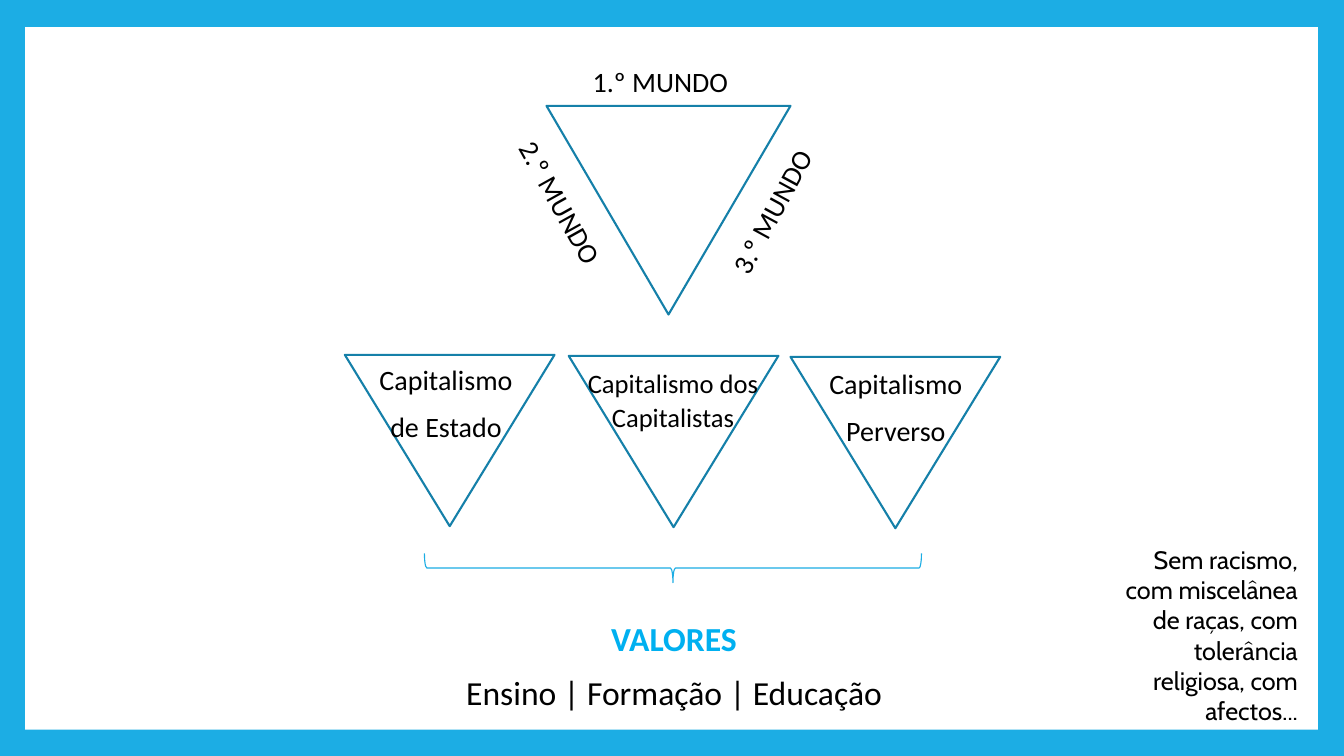
"""Build the slide on three worlds, three capitalisms and their values."""
import dataclasses
import typing

import pptx
import pptx.dml.color
import pptx.enum.shapes
import pptx.enum.text
import pptx.util

Inches = pptx.util.Inches
Pt = pptx.util.Pt
Kind = pptx.enum.shapes.MSO_SHAPE
Align = pptx.enum.text.PP_ALIGN
Box = tuple[float, float, float, float]


@dataclasses.dataclass(frozen=True)
class Theme:
    """Colours, fonts and type sizes of the slide."""
    frame: str = "1CADE4"
    paper: str = "FFFFFF"
    edge: str = "1580A9"
    ink: str = "000000"
    accent: str = "00B0F0"
    font: str = "Calibri"
    aside: str = "Cabin"
    small: float = 18
    snug: float = 19
    body: float = 20
    large: float = 24
    thick: float = 1.5
    thin: float = 0.79


THEME = Theme()


@dataclasses.dataclass(frozen=True)
class Form:
    """A preset shape with its fill, line and turn."""
    kind: Kind
    box: Box
    fill: str | None = None
    line: str | None = None
    width: float = THEME.thick
    turn: float = 0


@dataclasses.dataclass(frozen=True)
class Run:
    """A stretch of text in one style."""
    text: str
    size: float = THEME.body
    color: str = THEME.ink
    bold: bool = False
    font: str = THEME.font


@dataclasses.dataclass(frozen=True)
class Label:
    """A text box with one run per paragraph."""
    box: Box
    runs: tuple[Run, ...]
    align: Align = Align.CENTER
    turn: float = 0
    lead: float = 1.07
    after: float = 8


def triangle(left: float, top: float, wide: float, high: float,
             fill: str | None = None) -> Form:
    """Describe a triangle that stands on its tip."""
    return Form(Kind.ISOSCELES_TRIANGLE, (left, top, wide, high),
                fill, THEME.edge, turn=180)


def world(text: str, box: Box, turn: float = 0) -> Label:
    """Describe a label along one side of the top triangle."""
    return Label(box, (Run(text),), Align.LEFT, turn)


FORMS = (
    Form(Kind.RECTANGLE, (0.25, 0.27, 12.82, 6.97), THEME.paper),
    triangle(5.42, 1.05, 2.42, 2.07),
    *(triangle(left, top, 2.08, 1.7, THEME.paper)
      for left, top in ((3.42, 3.52), (5.64, 3.53), (7.84, 3.54))),
    Form(Kind.LEFT_BRACE, (6.53, 3.17, 0.29, 4.93), None,
         THEME.frame, THEME.thin, 270),
)

LABELS = (
    world("1.º MUNDO", (5.78, 0.57, 1.71, 0.55)),
    world("2.º MUNDO", (4.72, 1.8, 1.66, 0.57), 60.8),
    world("3.º MUNDO", (6.89, 1.78, 1.66, 0.57), 298.6),
    Label((3.65, 3.52, 1.61, 0.8), (Run("Capitalismo "), Run("de Estado "))),
    Label((5.71, 3.57, 1.93, 0.8),
          (Run("Capitalismo dos Capitalistas", THEME.snug),)),
    Label((8.04, 3.56, 1.69, 0.8), (Run("Capitalismo"), Run("Perverso"))),
    Label((4.08, 6.05, 5.21, 1.08),
          (Run("VALORES", THEME.large, THEME.accent, True),
           Run("Ensino | Formação | Educação", THEME.large))),
    Label((10.96, 5.35, 2.01, 2.22),
          (Run("Sem racismo, com miscelânea de raças, com tolerância "
               "religiosa, com afectos...", THEME.small, font=THEME.aside),),
          Align.RIGHT, lead=1.0, after=0),
)


def color(code: str) -> pptx.dml.color.RGBColor:
    """Turn a hex code into a colour."""
    return pptx.dml.color.RGBColor.from_string(code)


def draw_form(slide: typing.Any, form: Form) -> None:
    """Draw a preset shape."""
    shape = slide.shapes.add_shape(form.kind, *map(Inches, form.box))
    shape.shadow.inherit = False
    shape.rotation = form.turn
    if form.fill:
        shape.fill.solid()
        shape.fill.fore_color.rgb = color(form.fill)
    else:
        shape.fill.background()
    if form.line:
        shape.line.color.rgb = color(form.line)
        shape.line.width = Pt(form.width)
    else:
        shape.line.fill.background()


def draw_label(slide: typing.Any, label: Label) -> None:
    """Draw a text box paragraph by paragraph."""
    shape = slide.shapes.add_textbox(*map(Inches, label.box))
    shape.rotation = label.turn
    frame = shape.text_frame
    frame.word_wrap = True
    for spot, run in enumerate(label.runs):
        para = frame.add_paragraph() if spot else frame.paragraphs[0]
        para.alignment = label.align
        para.line_spacing = label.lead
        para.space_after = Pt(label.after)
        part = para.add_run()
        part.text = run.text
        part.font.name = run.font
        part.font.size = Pt(run.size)
        part.font.bold = run.bold
        part.font.color.rgb = color(run.color)


def main() -> None:
    """Build and save the deck."""
    deck = pptx.Presentation()
    deck.slide_width = Inches(13.33)
    deck.slide_height = Inches(7.5)
    slide = deck.slides.add_slide(deck.slide_layouts[6])
    slide.background.fill.solid()
    slide.background.fill.fore_color.rgb = color(THEME.frame)
    for form in FORMS:
        draw_form(slide, form)
    for label in LABELS:
        draw_label(slide, label)
    deck.save("out.pptx")


if __name__ == "__main__":
    main()
